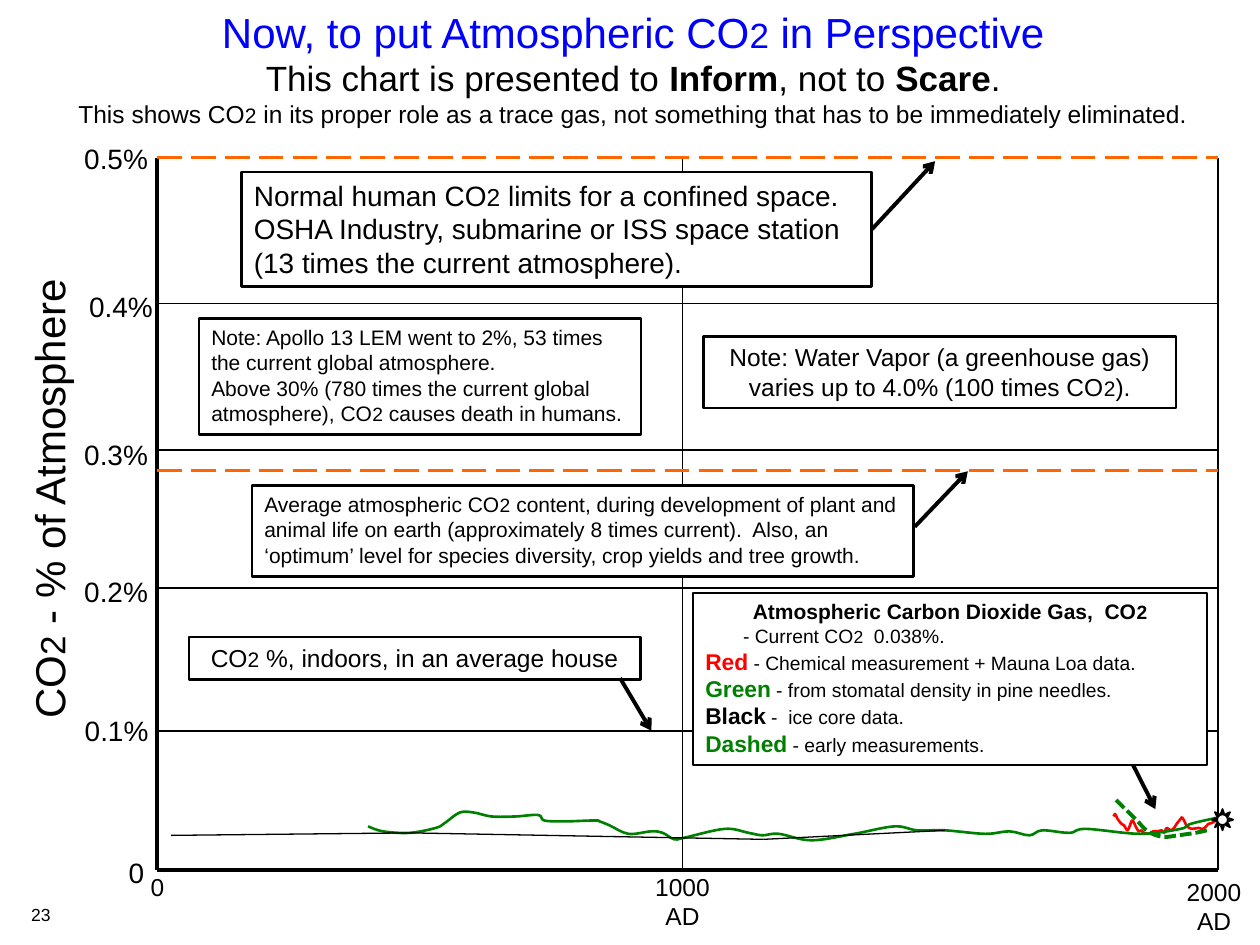
from itertools import pairwise

from lxml import etree
from pptx import Presentation
from pptx.dml.color import RGBColor
from pptx.enum.dml import MSO_LINE
from pptx.enum.shapes import MSO_CONNECTOR, MSO_SHAPE
from pptx.enum.text import MSO_ANCHOR, MSO_AUTO_SIZE, PP_ALIGN
from pptx.oxml.ns import qn
from pptx.util import Cm, Pt

BLACK = RGBColor(0x00, 0x00, 0x00)
WHITE = RGBColor(0xFF, 0xFF, 0xFF)
BLUE = RGBColor(0x00, 0x00, 0xFF)
RED = RGBColor(0xFF, 0x00, 0x00)
GREEN = RGBColor(0x00, 0x80, 0x00)
ORANGE = RGBColor(0xFF, 0x66, 0x00)
LEFT, CENTER, RIGHT = PP_ALIGN.LEFT, PP_ALIGN.CENTER, PP_ALIGN.RIGHT
LONG_DASH, SHORT_DASH = MSO_LINE.LONG_DASH, MSO_LINE.SQUARE_DOT

AXIS_LEFT, AXIS_MIDDLE, AXIS_RIGHT = 3.17, 13.76, 24.56
AXIS_TOP, AXIS_BOTTOM = 3.18, 17.53
GRID_LEVELS = (6.12, 9.07, 11.85, 14.74)
LIFE_AVERAGE_LEVEL = 9.48

PERCENT_LABELS = [  # text, left, top
    ("0.5%", 1.39, 2.72), ("0.4%", 1.49, 5.72), ("0.3%", 1.39, 8.69),
    ("0.2%", 1.39, 11.46), ("0.1%", 1.4, 14.25), ("0", 1.8, 17.12),
]
YEAR_LABELS = [  # lines, left, top, width
    (("0",), 2.64, 17.45, 1.07),
    (("1000", "AD"), 12.49, 17.45, 2.54),
    (("2000", "AD"), 23.6, 17.55, 1.75),
]
ARROWS = [
    ((12.5, 13.67), (13.13, 14.73)), ((17.58, 4.62), (18.85, 3.25)),
    ((22.43, 14.61), (23.29, 16.31)), ((18.44, 10.62), (19.51, 9.5)),
]
ICE_CORE = [(3.45, 16.84), (8.28, 16.79), (15.39, 16.92), (19.05, 16.74)]
STOMATA = [
    (24.56, 16.48), (24, 16.61), (23.8, 16.71), (22.99, 16.81), (21.89, 16.71),
    (21.56, 16.79), (21.01, 16.74), (20.75, 16.84), (20.35, 16.76), (19.86, 16.81),
    (19.05, 16.74), (18.49, 16.74), (18.03, 16.66), (17.22, 16.81), (16.36, 16.94),
    (15.7, 16.81), (15.37, 16.84), (15.09, 16.79), (14.61, 16.71), (13.79, 16.89),
    (13.59, 16.92), (13.36, 16.79), (13.13, 16.76), (12.67, 16.81), (12.29, 16.64),
    (12.09, 16.56), (11.99, 16.54), (11.35, 16.56), (10.97, 16.54), (10.85, 16.43),
    (10.39, 16.46), (9.91, 16.46), (9.55, 16.38), (9.27, 16.38), (8.97, 16.59),
    (8.79, 16.69), (8.26, 16.79), (7.72, 16.76), (7.42, 16.66),
]
CHEMICAL = [
    (24.56, 16.51), (24.43, 16.59), (24.36, 16.61), (24.26, 16.71), (24.16, 16.69),
    (24.03, 16.71), (23.93, 16.66), (23.88, 16.56), (23.83, 16.48), (23.8, 16.51),
    (23.72, 16.61), (23.67, 16.69), (23.6, 16.74), (23.52, 16.69), (23.47, 16.79),
    (23.42, 16.74), (23.34, 16.76), (23.24, 16.76), (23.19, 16.81), (23.06, 16.79),
    (23.01, 16.74), (22.96, 16.76), (22.91, 16.69), (22.83, 16.54), (22.78, 16.64),
    (22.73, 16.74), (22.66, 16.64), (22.61, 16.61), (22.53, 16.51), (22.48, 16.41),
    (22.45, 16.46),
]
EARLY = [
    (24.33, 16.74), (24.1, 16.79), (23.75, 16.84), (23.44, 16.87), (23.14, 16.76),
    (22.89, 16.51), (22.5, 16.13),
]


def run(text, size, **formats):
    return text, {"name": "Arial", "size": Pt(size), "bold": False, "color": BLACK} | formats


def co2(before, after, size, small_size, **formats):
    """Runs of a text in which the 2 of CO2 is set smaller."""
    return [run(before + "CO", size, **formats), run("2", small_size, **formats),
            run(after, size, **formats)]


def legend_entry(name, color, description):
    return [run(name, 13, bold=True, color=color), run(" " + description, 11)]


def write(shape, paragraphs, alignment):
    frame = shape.text_frame
    frame.word_wrap = True
    frame.auto_size = MSO_AUTO_SIZE.SHAPE_TO_FIT_TEXT
    frame.vertical_anchor = MSO_ANCHOR.TOP
    for index, runs in enumerate(paragraphs):
        paragraph = frame.paragraphs[0] if index == 0 else frame.add_paragraph()
        paragraph.alignment = alignment
        for text, formats in runs:
            text_run = paragraph.add_run()
            text_run.text = text
            for name, value in formats.items():
                if name == "color":
                    text_run.font.color.rgb = value
                else:
                    setattr(text_run.font, name, value)
    return frame


def add_text(slide, bounds, paragraphs, alignment=CENTER):
    box = slide.shapes.add_textbox(*map(Cm, bounds))
    write(box, paragraphs, alignment)
    return box


def style_line(line, color, width, dash=None):
    line.color.rgb = color
    line.width = Pt(width)
    if dash is not None:
        line.dash_style = dash


def add_outlined(slide, preset, bounds, width):
    shape = slide.shapes.add_shape(preset, *map(Cm, bounds))
    shape.shadow.inherit = False
    shape.fill.solid()
    shape.fill.fore_color.rgb = WHITE
    style_line(shape.line, BLACK, width)
    return shape


def add_note(slide, bounds, paragraphs, alignment=LEFT, width=1.5):
    return write(add_outlined(slide, MSO_SHAPE.RECTANGLE, bounds, width), paragraphs, alignment)


def add_line(slide, start, end, width, color=BLACK, dash=None, arrow=False):
    connector = slide.shapes.add_connector(MSO_CONNECTOR.STRAIGHT, *map(Cm, start + end))
    style_line(connector.line, color, width, dash)
    properties = connector.line._get_or_add_ln()
    if arrow:
        etree.SubElement(properties, qn("a:tailEnd"), type="arrow")
    etree.SubElement(properties.getparent(), qn("a:effectLst"))


def smooth(shape):
    """Turn the straight segments of a freeform into Bezier curves through its points."""
    points = [(int(point.get("x")), int(point.get("y")))
              for point in shape._element.iter(qn("a:pt"))]
    padded = [points[0], *points, points[-1]]
    for index, segment in enumerate(list(shape._element.iter(qn("a:lnTo")))):
        before, start, end, after = padded[index:index + 4]
        controls = (
            [s + (e - b) / 6 for b, s, e in zip(before, start, end)],
            [e - (a - s) / 6 for s, e, a in zip(start, end, after)],
            end)
        curve = etree.Element(qn("a:cubicBezTo"))
        for x, y in controls:
            etree.SubElement(curve, qn("a:pt"), x=str(round(x)), y=str(round(y)))
        segment.getparent().replace(segment, curve)


def add_curve(slide, points, color, width, dash=None):
    start, *rest = [(Cm(x), Cm(y)) for x, y in points]
    builder = slide.shapes.build_freeform(*start)
    builder.add_line_segments(rest, close=False)
    shape = builder.convert_to_shape()
    smooth(shape)
    shape.shadow.inherit = False
    shape.fill.background()
    style_line(shape.line, color, width, dash)


def add_axes(slide):
    for level in GRID_LEVELS:
        add_line(slide, (AXIS_LEFT, level), (AXIS_RIGHT, level), 1)
    for x, width in ((AXIS_LEFT, 2.25), (AXIS_MIDDLE, 1), (AXIS_RIGHT, 1)):
        add_line(slide, (x, AXIS_BOTTOM), (x, AXIS_TOP), width)
    add_line(slide, (AXIS_LEFT, AXIS_BOTTOM), (AXIS_RIGHT, AXIS_BOTTOM), 2.25)
    for level in (AXIS_TOP, LIFE_AVERAGE_LEVEL):
        add_line(slide, (AXIS_LEFT, level), (AXIS_RIGHT, level), 1.75, ORANGE, LONG_DASH)
    for text, left, top in PERCENT_LABELS:
        add_text(slide, (left, top, 1.9, 0.94), [[run(text, 16)]])
    for lines, left, top, width in YEAR_LABELS:
        add_text(slide, (left, top, width, 0.86 if len(lines) == 1 else 1.45),
                 [[run(line, 14)] for line in lines])
    axis_title = add_text(slide, (-6.32, 9.42, 14.6, 1.27), [co2("", " - % of Atmosphere", 24, 20)])
    axis_title.rotation = 270


def add_notes(slide):
    add_note(slide, (3.81, 12.84, 9.1, 0.86),
             [co2("", " %, indoors, in an average house", 14, 12)], CENTER)
    add_note(slide, (4.87, 3.47, 12.7, 2.31), [co2(
        "Normal human ", " limits for a confined space.  OSHA Industry, submarine or ISS "
        "space station (13 times the current atmosphere).", 16, 14)])
    add_note(slide, (4.01, 6.42, 8.91, 2.34), [
        [run("Note: Apollo 13 LEM went to 2%, 53 times the current global atmosphere.", 12)],
        co2("Above 30% (780 times the current global atmosphere), ",
            " causes death in humans.", 12, 11)])
    add_note(slide, (14.18, 6.78, 9.53, 1.45), [co2(
        "Note: Water Vapor (a greenhouse gas) varies up to 4.0% (100 times ", ").", 14, 12)], CENTER)
    add_note(slide, (5.08, 9.79, 13.34, 1.83), [co2(
        "Average atmospheric ", " content, during development of plant and animal life on earth "
        "(approximately 8 times current).  Also, an ‘optimum’ level for species diversity, "
        "crop yields and tree growth.", 12, 11)])


def add_legend(slide):
    legend = add_note(slide, (13.97, 11.95, 10.37, 3.48), [
        co2("Atmospheric Carbon Dioxide Gas,  ", "", 12, 11, bold=True)[:2],
        co2("- Current ", "  0.038%.", 11, 10),
        legend_entry("Red", RED, "- Chemical measurement + Mauna Loa data."),
        legend_entry("Green", GREEN, "- from stomatal density in pine needles."),
        legend_entry("Black", BLACK, "-  ice core data."),
        legend_entry("Dashed", GREEN, "- early measurements.")], width=1)
    legend.paragraphs[0].alignment = CENTER
    legend.paragraphs[1]._p.get_or_add_pPr().set("marL", str(Cm(0.76)))


def main():
    presentation = Presentation()
    presentation.slide_width, presentation.slide_height = Cm(25.4), Cm(19.05)
    slide = presentation.slides.add_slide(presentation.slide_layouts[6])
    add_text(slide, (1.12, 0, 23.29, 2.72), [
        co2("Now, to put Atmospheric ", " in Perspective", 24, 20, color=BLUE),
        [run("This chart is presented to ", 20), run("Inform", 20, bold=True),
         run(", not to ", 20), run("Scare", 20, bold=True), run(".", 20)],
        co2("This shows ", " in its proper role as a trace gas, not something that has to be "
            "immediately eliminated.", 14, 12)])
    add_axes(slide)
    add_curve(slide, CHEMICAL, RED, 1.5)
    add_curve(slide, STOMATA, GREEN, 1.5)
    add_curve(slide, EARLY, GREEN, 2.25, SHORT_DASH)
    for start, end in pairwise(ICE_CORE):
        add_line(slide, start, end, 0.75)
    sun = add_outlined(slide, MSO_SHAPE.SUN, (24.43, 16.31, 0.43, 0.43), 1)
    sun.adjustments[0] = 0.25
    add_notes(slide)
    for start, end in ARROWS:
        add_line(slide, start, end, 2.25, arrow=True)
    add_legend(slide)
    add_text(slide, (0.2, 18.1, 1.07, 0.74), [[run("23", 10)]], RIGHT)
    presentation.save("out.pptx")


if __name__ == "__main__":
    main()
